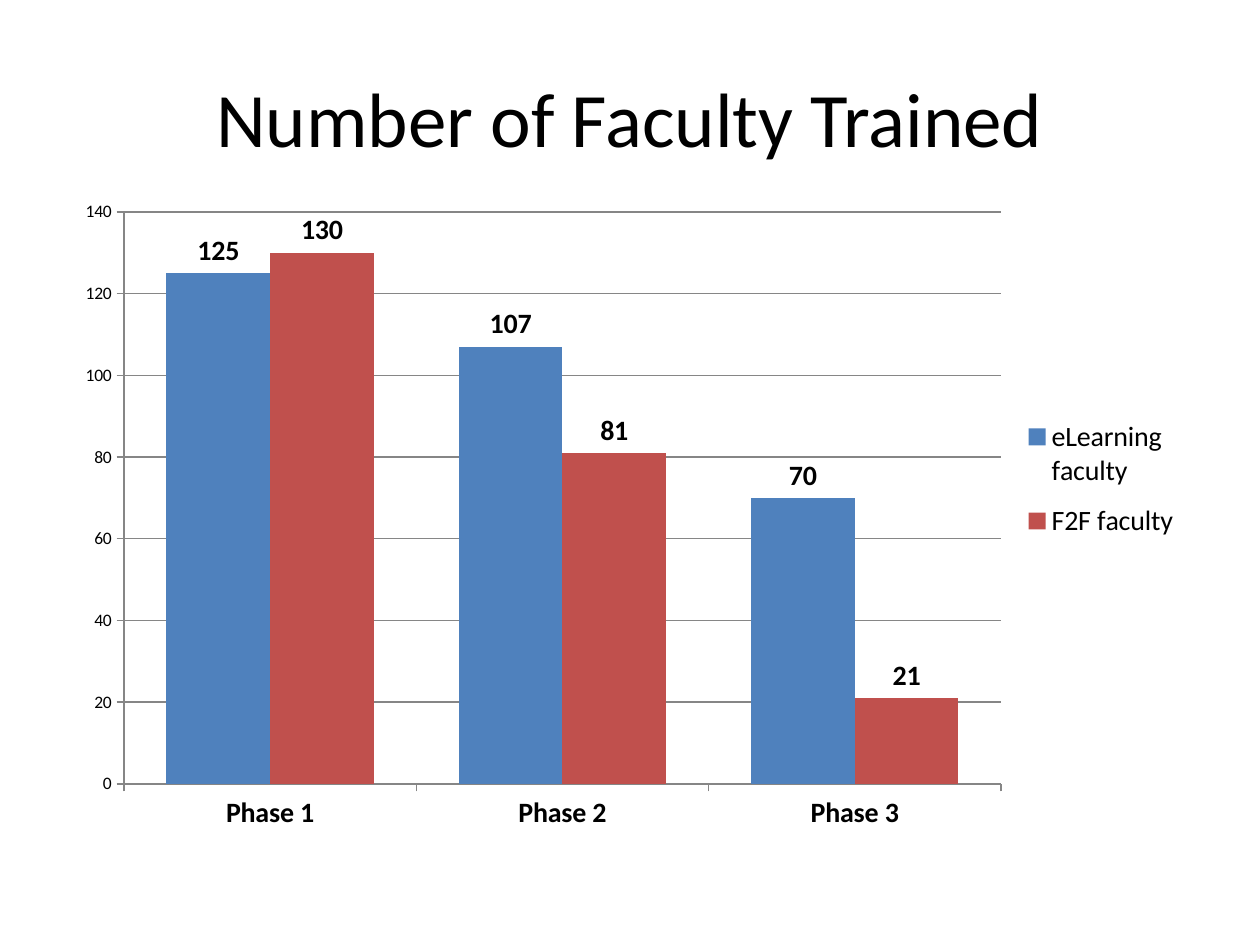
from typing import NamedTuple

from lxml import etree
from pptx import Presentation
from pptx.chart.data import CategoryChartData
from pptx.dml.color import RGBColor
from pptx.enum import chart as ch, text
from pptx.oxml import ns
from pptx.util import Pt

SCALE = 914400 / 126


class Box(NamedTuple):
    left: int
    top: int
    width: int
    height: int


class Group(NamedTuple):
    name: str
    vals: tuple
    color: str


PHASES = ("Phase 1", "Phase 2", "Phase 3")
GROUPS = (
    Group("eLearning faculty", (125, 107, 70), "4F81BD"),
    Group("F2F faculty", (130, 81, 21), "C0504D"),
)
GRAPH = Box(63, 189, 1134, 655)
BARS = Box(124, 212, 877, 572)
LEGEND = Box(1016, 404, 170, 150)


def px(num: int) -> int:
    return round(num * SCALE)


def tint(code: str) -> RGBColor:
    return RGBColor.from_string(code)


def assign(item, vals: dict) -> None:
    for key, val in vals.items():
        setattr(item, key, val)


def style(font, size: int, bold: bool = False) -> None:
    assign(font, {"name": "Calibri", "size": Pt(size), "bold": bold})
    font.color.rgb = tint("000000")


def place(node, spot: int, box: Box, inner: bool = False) -> None:
    for old in node.findall(ns.qn("c:layout")):
        node.remove(old)
    layout = etree.Element(ns.qn("c:layout"))
    node.insert(spot, layout)
    manual = etree.SubElement(layout, ns.qn("c:manualLayout"))
    vals = {"layoutTarget": "inner"} if inner else {}
    vals |= {
        "xMode": "edge",
        "yMode": "edge",
        "x": (box.left - GRAPH.left) / GRAPH.width,
        "y": (box.top - GRAPH.top) / GRAPH.height,
        "w": box.width / GRAPH.width,
        "h": box.height / GRAPH.height,
    }
    for key, val in vals.items():
        etree.SubElement(manual, ns.qn(f"c:{key}"), val=str(val))


def head(slide, box: Box, words: str) -> None:
    title = slide.shapes.title
    assign(title, {key: px(val) for key, val in box._asdict().items()})
    frame = title.text_frame
    assign(frame, {"text": words, "word_wrap": True,
                   "vertical_anchor": text.MSO_ANCHOR.MIDDLE})
    line = frame.paragraphs[0]
    line.alignment = text.PP_ALIGN.CENTER
    style(line.runs[0].font, 44)


def plot(slide) -> None:
    data = CategoryChartData(number_format="0")
    data.categories = PHASES
    for group in GROUPS:
        data.add_series(group.name, group.vals)
    chart = slide.shapes.add_chart(
        ch.XL_CHART_TYPE.COLUMN_CLUSTERED, *map(px, GRAPH), data).chart
    assign(chart, {"has_title": False, "has_legend": True})
    style(chart.font, 10)
    assign(chart.legend, {"position": ch.XL_LEGEND_POSITION.RIGHT,
                          "include_in_layout": False})
    style(chart.legend.font, 16)

    bars = chart.plots[0]
    assign(bars, {"gap_width": 82, "overlap": 0, "vary_by_categories": False})
    place(bars._element.getparent(), 0, BARS, inner=True)
    place(chart.legend._element, 1, LEGEND)
    for group, series in zip(GROUPS, bars.series):
        series.format.fill.solid()
        series.format.fill.fore_color.rgb = tint(group.color)
        labels = series.data_labels
        assign(labels, {"show_value": True,
                        "position": ch.XL_LABEL_POSITION.OUTSIDE_END})
        style(labels.font, 16, True)

    for axis in (chart.category_axis, chart.value_axis):
        axis.major_tick_mark = ch.XL_TICK_MARK.OUTSIDE
        axis.format.line.color.rgb = tint("868686")
    style(chart.category_axis.tick_labels.font, 16, True)
    value = chart.value_axis
    assign(value, {"minimum_scale": 0, "maximum_scale": 140, "major_unit": 20,
                   "has_major_gridlines": True})
    style(value.tick_labels.font, 10)
    value.major_gridlines.format.line.color.rgb = tint("868686")


def main() -> None:
    deck = Presentation()
    assign(deck, {"slide_width": px(1260), "slide_height": px(945)})
    slide = deck.slides.add_slide(deck.slide_layouts[5])
    head(slide, Box(63, 38, 1134, 158), "Number of Faculty Trained")
    plot(slide)
    deck.save("out.pptx")


if __name__ == "__main__":
    main()
